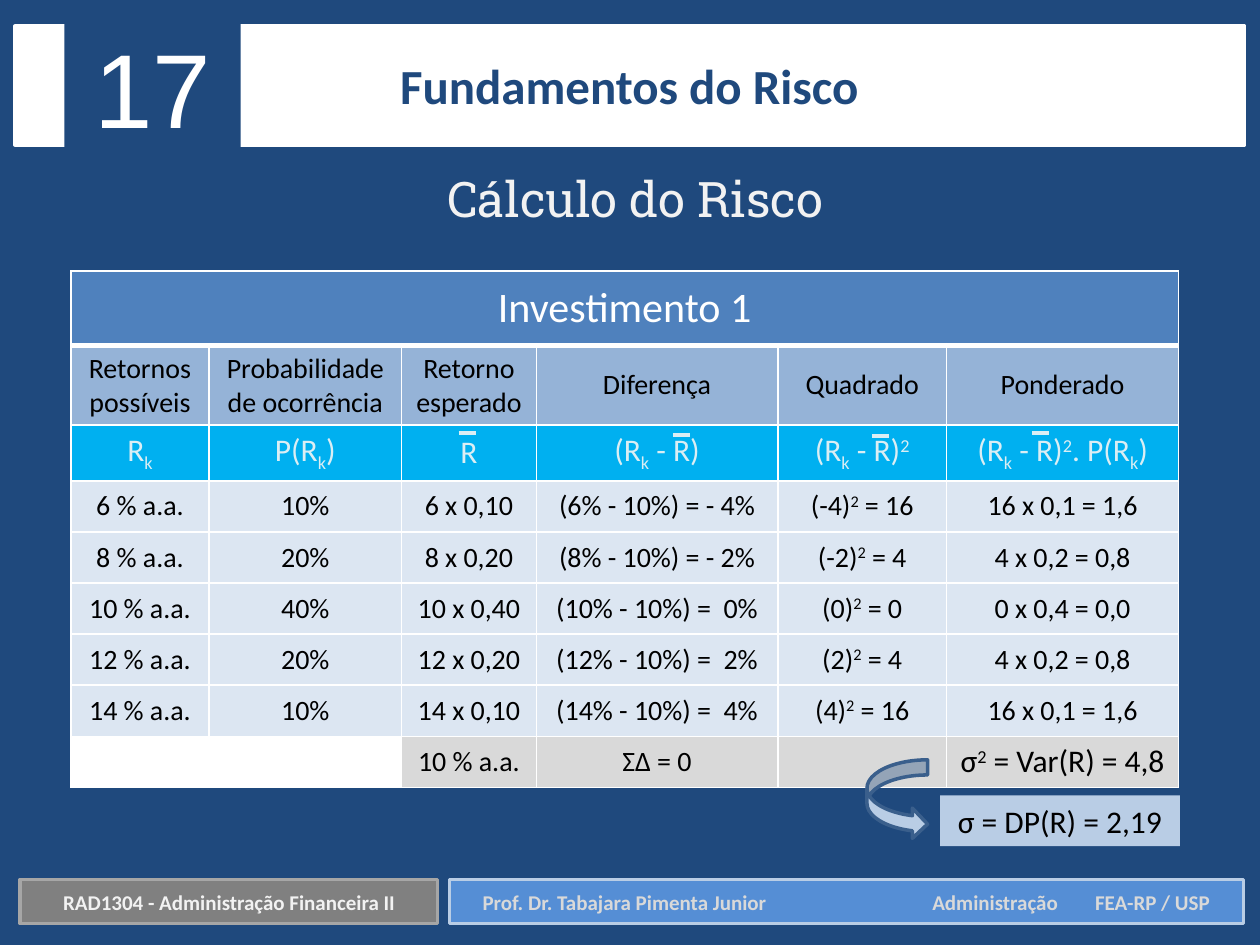
from lxml import etree
from pptx import Presentation
from pptx import util as u
from pptx.dml.color import RGBColor
from pptx.enum import shapes, text
from pptx.oxml import ns

THEME = {
    "navy": "1F497D", "white": "FFFFFF", "black": "000000", "pale": "F2F2F2",
    "silver": "D9D9D9", "grey": "808080", "grey_edge": "A6A6A6",
    "blue": "558ED5", "sky": "B9CDE5", "arrow_edge": "3A5F8C",
    "banner": "4F81BD", "heading": "95B3D7", "cyan": "00B0F0",
    "ice": "DBEEF4", "body": "DCE6F2",
    "font": "Calibri", "title_font": "Roboto Slab", "number_font": "Arial",
    "footer": 12, "cell": 16, "formula": 18, "table_title": 24, "title": 28, "number": 60,
}


def color(name):
    return RGBColor.from_string(THEME[name])


def write(frame, content, size, ink, font="font", bold=False):
    frame.vertical_anchor = text.MSO_ANCHOR.MIDDLE
    para = frame.paragraphs[0]
    para.alignment = text.PP_ALIGN.CENTER
    for piece in content.split("|"):
        span = para.add_run()
        span.text = piece.lstrip("_^")
        span.font.size = u.Pt(THEME[size])
        span.font.name = THEME[font]
        span.font.bold = bold
        span.font.color.rgb = color(ink)
        if piece[0] in "_^":
            span.font._element.set("baseline", "-25000" if piece[0] == "_" else "30000")


deck = Presentation()
deck.slide_width, deck.slide_height = u.Pt(720), u.Pt(540)
page = deck.slides.add_slide(deck.slide_layouts[6])
page.background.fill.solid()
page.background.fill.fore_color.rgb = color("navy")

RECT = shapes.MSO_SHAPE.RECTANGLE
panels = {}
for name, kind, left, top, width, height, fill, edge in [
    ("teacher", RECT, 257, 502.6, 453.6, 25.2, "blue", "sky"),
    ("course", RECT, 11.5, 502.6, 238.5, 25.2, "grey", "grey_edge"),
    ("arrow", shapes.MSO_SHAPE.CURVED_RIGHT_ARROW, 495.4, 434.2, 34.6, 45.4, "sky", "arrow_edge"),
    ("deviation", RECT, 537.2, 454.5, 137, 29, "sky", None),
    ("header", RECT, 8.6, 15, 702.7, 67.8, "white", "white"),
    ("number", RECT, 36.8, 9.4, 100.8, 79.9, "navy", None),
]:
    panel = page.shapes.add_shape(kind, u.Pt(left), u.Pt(top), u.Pt(width), u.Pt(height))
    panel.shadow.inherit = False
    panel.fill.solid()
    panel.fill.fore_color.rgb = color(fill)
    if edge:
        panel.line.color.rgb = color(edge)
        panel.line.width = u.Pt(2)
    else:
        panel.line.fill.background()
    panels[name] = panel

write(panels["number"].text_frame, "17", "number", "white", "number_font")
write(panels["deviation"].text_frame, "σ = DP(R) = 2,19", "formula", "black")
panels["deviation"].text_frame.word_wrap = False

labels = {}
for content, left, top, width, height, size, ink, font, bold in [
    ("Prof. Dr. Tabajara Pimenta Junior\tAdministração\tFEA-RP / USP",
     251.3, 504.7, 465, 21.6, "footer", "silver", "font", True),
    ("RAD1304 - Administração Financeira II",
     15.1, 504.7, 231.8, 21.6, "footer", "pale", "font", True),
    ("Cálculo do Risco", 126, 92.9, 473.8, 41, "title", "pale", "title_font", False),
    ("Fundamentos do Risco", 167, 28.1, 385.2, 41, "title", "navy", "font", True),
]:
    box = page.shapes.add_textbox(u.Pt(left), u.Pt(top), u.Pt(width), u.Pt(height))
    box.text_frame.word_wrap = True
    labels[content.split("\t")[0]] = box.text_frame
    write(box.text_frame, content, size, ink, font, bold)

teacher = labels["Prof. Dr. Tabajara Pimenta Junior"]
teacher.margin_left = u.Pt(24.5)
teacher.paragraphs[0].alignment = text.PP_ALIGN.LEFT
stops = etree.SubElement(teacher.paragraphs[0]._p.get_or_add_pPr(), ns.qn("a:tabLst"))
for position in (257, 350):
    etree.SubElement(stops, ns.qn("a:tab"), pos=str(u.Pt(position)), algn="l")

rows = [
    ["Investimento 1", "", "", "", "", ""],
    ["Retornos possíveis", "Probabilidade de ocorrência", "Retorno esperado",
     "Diferença", "Quadrado", "Ponderado"],
    ["R|_k", "P(R|_k|)", "R", "(R|_k| - R)", "(R|_k| - R)|^2", "(R|_k| - R)|^2|. P(R|_k|)"],
    ["6 % a.a.", "10%", "6 x 0,10", "(6% - 10%) = - 4%", "(-4)|^2| = 16", "16 x 0,1 = 1,6"],
    ["8 % a.a.", "20%", "8 x 0,20", "(8% - 10%) = - 2%", "(-2)|^2| = 4", "4 x 0,2 = 0,8"],
    ["10 % a.a.", "40%", "10 x 0,40", "(10% - 10%) =  0%", "(0)|^2| = 0", "0 x 0,4 = 0,0"],
    ["12 % a.a.", "20%", "12 x 0,20", "(12% - 10%) =  2%", "(2)|^2| = 4", "4 x 0,2 = 0,8"],
    ["14 % a.a.", "10%", "14 x 0,10", "(14% - 10%) =  4%", "(4)|^2| = 16", "16 x 0,1 = 1,6"],
    ["", "", "10 % a.a.", "ΣΔ = 0", "", "σ|^2| = Var(R) = 4,8"],
]
row_styles = [
    (42.5, "banner", "table_title", "white"),
    (45.7, "heading", "cell", "black"),
    (31.7, "cyan", "formula", "ice"),
] + [(29.2, "body", "cell", "black")] * 5 + [(29.2, "silver", "cell", "black")]
column_widths = [79, 110, 77, 138, 96.5, 132.5]

frame = page.shapes.add_table(len(rows), len(column_widths), u.Pt(40.5), u.Pt(154.8),
                              u.Pt(sum(column_widths)), u.Pt(sum(style[0] for style in row_styles)))
table = frame.table
table.first_row = table.horz_banding = False
for column, width in zip(table.columns, column_widths):
    column.width = u.Pt(width)

for r, (contents, (height, fill, size, ink)) in enumerate(zip(rows, row_styles)):
    table.rows[r].height = u.Pt(height)
    for c, content in enumerate(contents):
        cell = table.cell(r, c)
        cell.fill.solid()
        cell.fill.fore_color.rgb = color("white" if r == 8 and c < 2 else fill)
        cell.vertical_anchor = text.MSO_ANCHOR.MIDDLE
        if content:
            write(cell.text_frame, content, "formula" if content[0] == "σ" else size, ink)
            cell.vertical_anchor = text.MSO_ANCHOR.MIDDLE
        for index, side in enumerate(("lnL", "lnR", "lnT", "lnB")):
            thick = (r, side) in ((0, "lnB"), (1, "lnT"))
            border = etree.Element(ns.qn("a:" + side), w=str(u.Pt(3 if thick else 1)))
            paint = etree.SubElement(border, ns.qn("a:solidFill"))
            etree.SubElement(paint, ns.qn("a:srgbClr"), val=THEME["white"])
            cell._tc.get_or_add_tcPr().insert(index, border)
table.cell(0, 0).merge(table.cell(0, 5))

for left, top in [(262.1, 247.7), (384.5, 248.4), (498.2, 249.1), (589.7, 247.7)]:
    bar = page.shapes.add_connector(shapes.MSO_CONNECTOR.STRAIGHT,
                                    u.Pt(left), u.Pt(top), u.Pt(left + 10), u.Pt(top))
    bar.line.color.rgb = color("ice")
    bar.line.width = u.Pt(2.25)
    etree.SubElement(bar._element.spPr, ns.qn("a:effectLst"))

for name in ("arrow", "deviation"):
    page.shapes._spTree.append(panels[name]._element)

deck.save("out.pptx")
